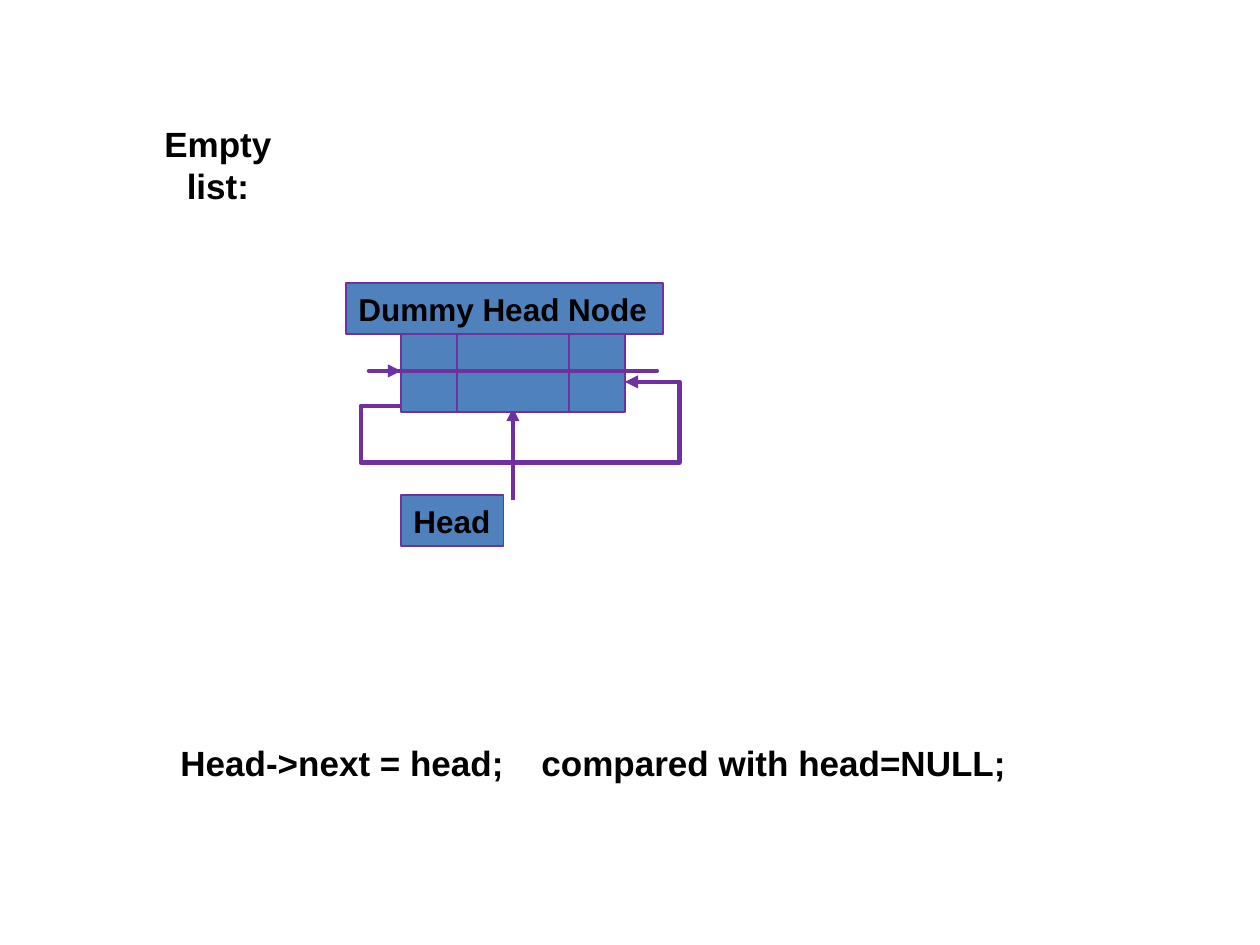
import pptx
import pptx.dml.color
import pptx.enum.shapes
import pptx.enum.text
import pptx.oxml.ns
import pptx.oxml.xmlchemy
import pptx.util

PX = 914400 // 126
COLORS = {"node": "4F81BD", "line": "7030A0", "text": "000000"}
SHAPE = pptx.enum.shapes.MSO_SHAPE
CONNECTOR = pptx.enum.shapes.MSO_CONNECTOR
ALIGN = pptx.enum.text.PP_ALIGN
qn = pptx.oxml.ns.qn


def px(value):
    return pptx.util.Emu(value * PX)


def color(name):
    return pptx.dml.color.RGBColor.from_string(COLORS[name])


def add_element(parent, tag, **attributes):
    element = pptx.oxml.xmlchemy.OxmlElement(tag)
    for name, value in attributes.items():
        element.set(name, str(value))
    parent.append(element)
    return element


def write(shape, text, size, align, wrap, tab=None):
    """Put one bold paragraph in the shape, with an optional tab stop in px."""
    frame = shape.text_frame
    frame.word_wrap = wrap
    frame.text = text
    paragraph = frame.paragraphs[0]
    paragraph.alignment = align
    if tab:
        tabs = add_element(paragraph._p.get_or_add_pPr(), "a:tabLst")
        add_element(tabs, "a:tab", pos=int(px(tab)), algn="l")
    for run in paragraph.runs:
        run.font.name = "Arial"
        run.font.size = pptx.util.Pt(size)
        run.font.bold = True
        run.font.color.rgb = color("text")


def add_box(shapes, left, top, width, height, line_width, text=None):
    box = shapes.add_shape(SHAPE.RECTANGLE, px(left), px(top), px(width), px(height))
    box.shadow.inherit = False
    box.fill.solid()
    box.fill.fore_color.rgb = color("node")
    box.line.color.rgb = color("line")
    box.line.width = pptx.util.Pt(line_width)
    if text:
        write(box, text, 18, ALIGN.LEFT, wrap=False)


def add_label(shapes, left, top, width, height, text, align, tab=None):
    label = shapes.add_textbox(px(left), px(top), px(width), px(height))
    write(label, text, 20, align, wrap=True, tab=tab)


def add_arrow(shapes, start, end, bends=None):
    """Draw a straight arrow, or a five-part elbow with the given adjustments."""
    kind = CONNECTOR.ELBOW if bends else CONNECTOR.STRAIGHT
    arrow = shapes.add_connector(kind, *map(px, start + end))
    arrow.line.color.rgb = color("line")
    arrow.line.width = pptx.util.Pt(2.5)
    properties = arrow._element.spPr
    add_element(properties.find(qn("a:ln")), "a:tailEnd", type="triangle")
    add_element(properties, "a:effectLst")
    if bends:
        geometry = properties.find(qn("a:prstGeom"))
        geometry.set("prst", "bentConnector5")
        guides = geometry.find(qn("a:avLst"))
        for number, bend in enumerate(bends, 1):
            add_element(guides, "a:gd", name=f"adj{number}", fmla=f"val {bend}")


def add_list_diagram(slide):
    shapes = slide.shapes.add_group_shape().shapes
    add_arrow(shapes, (513, 500), (513, 408))
    add_box(shapes, 401, 495, 103, 51, 0.75, "Head")

    left, cell_width = 401, 56
    for units in (1, 2, 1):
        add_box(shapes, left, 330, units * cell_width, 82, 1)
        left += units * cell_width

    add_box(shapes, 346, 283, 317, 51, 0.75, "Dummy Head Node")
    add_arrow(shapes, (625, 371), (401, 371), (-14300, -37075000, 114300))
    add_arrow(shapes, (401, 406), (625, 382), (-18000, -236200, 124300))


def main():
    presentation = pptx.Presentation()
    presentation.slide_width = px(1260)
    presentation.slide_height = px(945)
    slide = presentation.slides.add_slide(presentation.slide_layouts[6])
    add_list_diagram(slide)
    add_label(slide.shapes, 116, 116, 204, 55, "Empty list:", ALIGN.CENTER)
    add_label(slide.shapes, 168, 735, 852, 55,
              "Head->next = head;\tcompared with head=NULL;", ALIGN.LEFT, tab=361)
    presentation.save("out.pptx")


if __name__ == "__main__":
    main()
